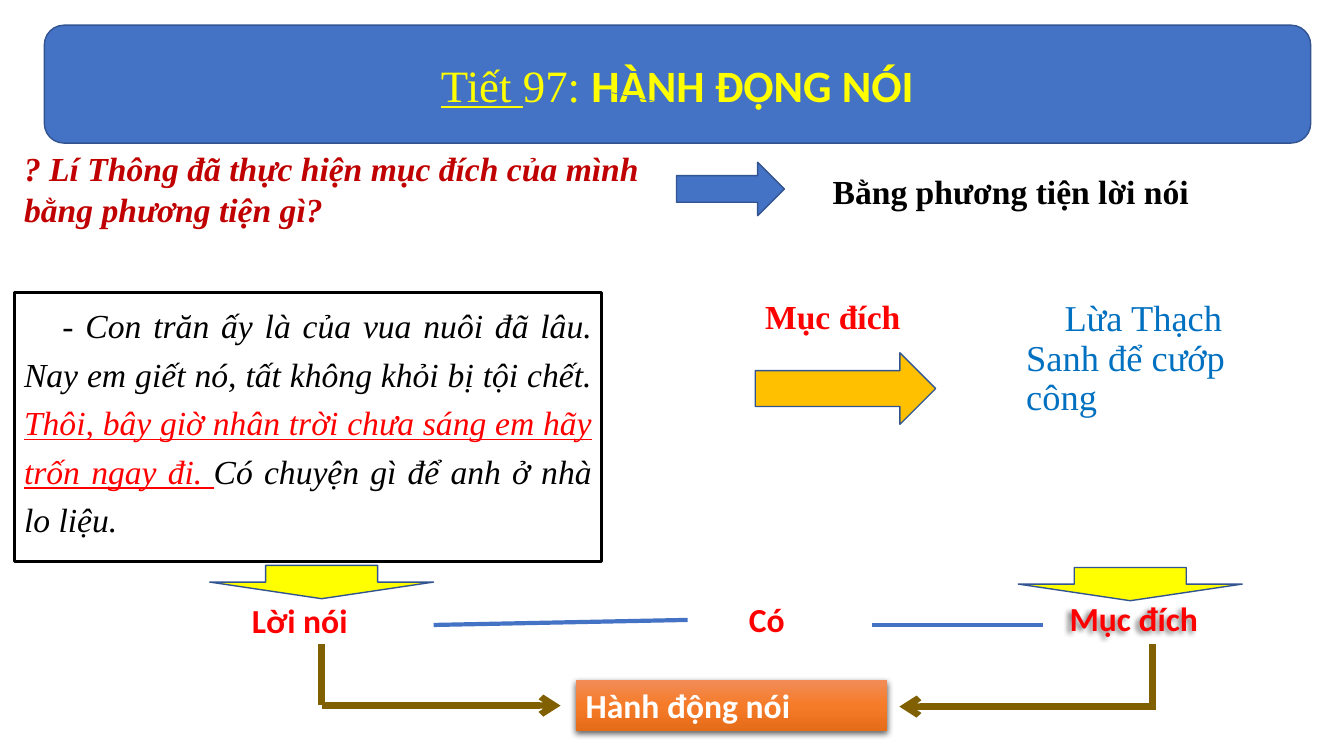
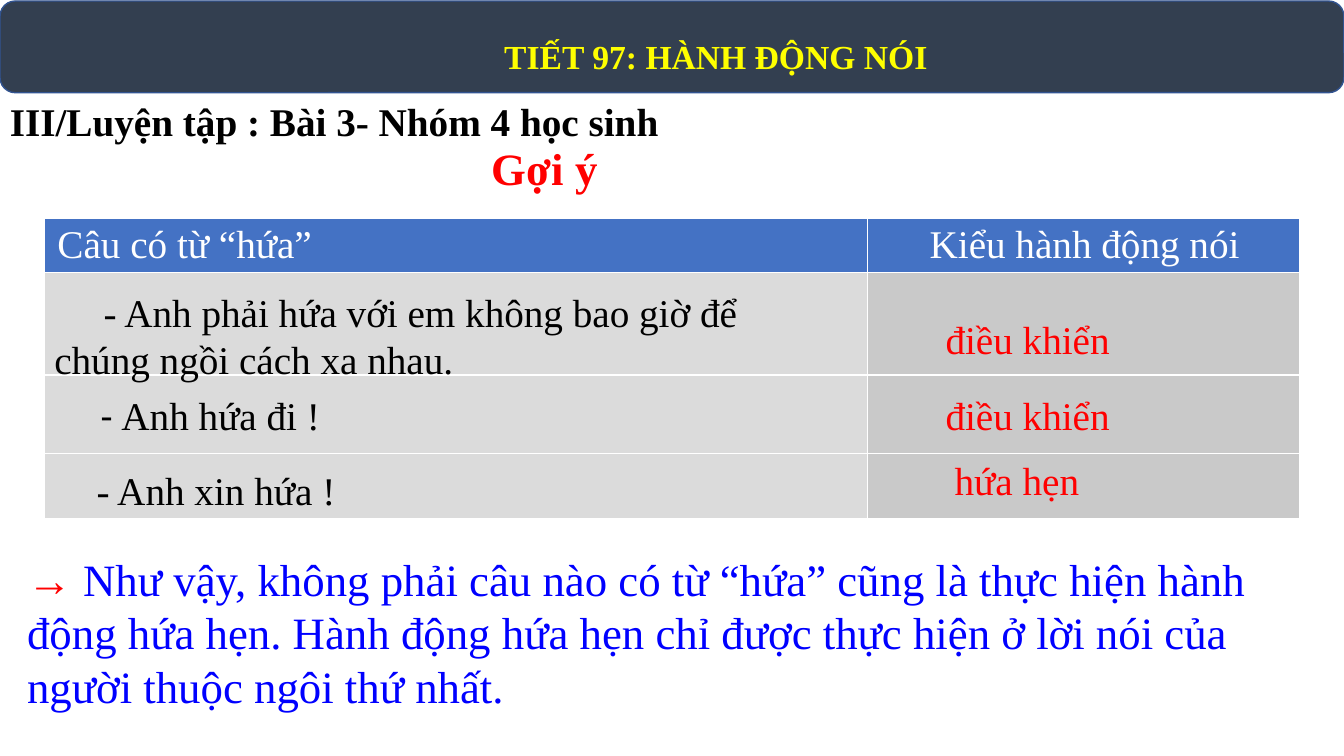
from lxml import etree
from pptx import Presentation
from pptx.dml.color import RGBColor
from pptx.enum import shapes, text
from pptx.oxml import parse_xml
from pptx.util import Inches, Pt

RED = RGBColor(255, 0, 0)
DARK_RED = RGBColor(0xC0, 0, 0)
YELLOW = RGBColor(255, 255, 0)
GOLD = RGBColor(0xFF, 0xC0, 0)
OLIVE = RGBColor(0x80, 0x60, 0)
BLUE = RGBColor(0x44, 0x72, 0xC4)
EDGE = RGBColor(0x32, 0x54, 0x91)
SKY = RGBColor(0, 0x70, 0xC0)
INK = RGBColor(0, 0, 255)
SLATE = RGBColor(0x33, 0x3F, 0x50)
BLACK = RGBColor(0, 0, 0)
WHITE = RGBColor(255, 255, 255)
GREYS = [RGBColor(0xDB, 0xDB, 0xDB), RGBColor(0xC9, 0xC9, 0xC9)]
ORANGES = [(0, "F18C57"), (50, "F67B28"), (100, "E56C19")]

SERIF, SANS = "Times New Roman", "Calibri"
NS = "http://schemas.openxmlformats.org/drawingml/2006/main"
KIND = shapes.MSO_SHAPE
ALIGN = text.PP_ALIGN
MIDDLE = text.MSO_ANCHOR.MIDDLE

# A run is (text, colour, style letters, font); style letters are b, i, u.
# A text is (left, top, width, height), size, runs, options.
TITLE = [("Tiết ", YELLOW, "u", SERIF), ("97: ", YELLOW, "", SERIF),
         ("HÀNH ĐỘNG NÓI", YELLOW, "b", SANS)]
QUOTE = [
    ("- ", BLACK, "", SERIF),
    ("Con trăn ấy là của vua nuôi đã lâu. Nay em giết nó, "
     "tất không khỏi bị tội chết. ", BLACK, "i", SERIF),
    ("Thôi, bây giờ nhân trời chưa sáng em hãy trốn ngay đi. ",
     RED, "iu", SERIF),
    ("Có chuyện gì để anh ở nhà lo liệu.", BLACK, "i", SERIF),
]
GOAL = [("Mục đích", RED, "b", SANS)]
SPEECH = [
    ((10.08, 2.93, 2.27, 2.55), 26,
     [("Lừa Thạch Sanh để cướp công", SKY, "", SERIF)],
     {"indent": 0.38, "gap": 0.9}),
    ((2.4, 5.9, 1.58, 0.5), 24, [("Lời nói", RED, "b", SANS)], {}),
    ((7.33, 5.89, 1.04, 0.5), 24, [("Có", RED, "b", SANS)], {}),
    ((7.49, 2.89, 2.06, 0.5), 24, [("Mục đích", RED, "b", SERIF)], {}),
    ((0.14, 1.42, 6.3, 0.91), 24,
     [("? Lí Thông đã thực hiện mục đích của mình bằng phương tiện gì?",
       DARK_RED, "bi", SERIF)], {}),
    ((8.16, 1.65, 4.18, 0.5), 24,
     [("Bằng phương tiện lời nói", BLACK, "b", SERIF)], {}),
]
ARROWS = [
    (KIND.RIGHT_ARROW, (7.49, 3.5, 1.79, 0.71), GOLD),
    (KIND.RIGHT_ARROW, (6.71, 1.61, 1.07, 0.53), BLUE),
    (KIND.DOWN_ARROW, (2.08, 5.61, 2.22, 0.33), YELLOW),
    (KIND.DOWN_ARROW, (10.1, 5.63, 2.22, 0.33), YELLOW),
]
LINES = [  # from x, from y, to x, to y, colour, width, arrowhead
    (4.3, 6.2, 6.82, 6.15, BLUE, 3, False),
    (8.65, 6.2, 10.34, 6.2, BLUE, 3, False),
    (3.19, 6.39, 3.19, 6.99, OLIVE, 4.5, False),
    (3.19, 7, 5.56, 7, OLIVE, 4.5, True),
    (11.43, 6.39, 11.43, 7.04, OLIVE, 4.5, False),
    (11.43, 7.01, 8.92, 7.01, OLIVE, 4.5, True),
    (6.07, 0.92, 7.69, 1.25, BLUE, 0.5, True),
]

HEADS = [("Câu có từ “hứa”", 0), ("Kiểu hành động nói", 0.49)]
COLS, ROWS = [8.16, 4.29], [0.52, 1.02, 0.78, 0.64]
DRILL = [
    ((1.1, 0.08, 12, 1.01), 24,
     [("TIẾT 97: HÀNH ĐỘNG NÓI", YELLOW, "b", SERIF)],
     {"align": ALIGN.CENTER, "gap": 0.9, "anchor": MIDDLE}),
    ((0, 0.92, 12, 0.57), 28,
     [("III/Luyện tập : Bài 3- Nhóm 4 học sinh", BLACK, "b", SERIF)], {}),
    ((4.78, 1.35, 1.37, 0.64), 32, [("Gợi ý", RED, "b", SERIF)], {}),
    ((0.44, 2.81, 7.66, 1.04), 28,
     [("- Anh phải hứa với em không bao giờ để chúng ngồi cách xa nhau.",
       BLACK, "", SERIF)], {"indent": 0.49}),
    ((0.9, 3.83, 3.54, 0.57), 28,
     [("- ", BLACK, "", SANS), ("Anh hứa đi !", BLACK, "", SERIF)], {}),
    ((0.86, 4.58, 2.59, 0.57), 28,
     [("- Anh xin hứa !", BLACK, "", SERIF)], {}),
    ((9.28, 3.08, 3.23, 0.57), 28, [("điều khiển", RED, "", SERIF)], {}),
    ((9.28, 3.83, 1.94, 0.57), 28, [("điều khiển", RED, "", SERIF)], {}),
    ((9.37, 4.48, 2.32, 0.57), 28, [("hứa hẹn", RED, "", SERIF)], {}),
    ((0.17, 5.42, 13.16, 1.72), 32,
     [("→", RED, "b", SERIF),
      (" Như vậy, không phải câu nào có từ “hứa” cũng là thực hiện hành "
       "động hứa hẹn. Hành động hứa hẹn chỉ được thực hiện ở lời nói của "
       "người thuộc ngôi thứ nhất.", INK, "", SERIF)], {}),
]


def place(at):
    return [Inches(n) for n in at]


def write(frame, size, runs, align=ALIGN.LEFT, indent=0, gap=None,
          anchor=text.MSO_ANCHOR.TOP):
    frame.word_wrap = True
    frame.vertical_anchor = anchor
    para = frame.paragraphs[0]
    para.alignment = align
    if indent:
        para._p.get_or_add_pPr().set("indent", str(Inches(indent)))
    if gap:
        para.line_spacing = gap
    for words, colour, style, face in runs:
        run = para.add_run()
        run.text = words
        font = run.font
        font.name, font.size = face, Pt(size)
        font.color.rgb = colour
        font.bold = "b" in style
        font.italic = "i" in style
        font.underline = "u" in style


def label(slide, at, size, runs, opts):
    box = slide.shapes.add_textbox(*place(at))
    write(box.text_frame, size, runs, **opts)
    return box


def block(slide, kind, at, fill=None, edge=EDGE, width=1):
    shape = slide.shapes.add_shape(kind, *place(at))
    shape.shadow.inherit = False
    if fill is None:
        shape.fill.background()
    else:
        shape.fill.solid()
        shape.fill.fore_color.rgb = fill
    if edge is None:
        shape.line.fill.background()
    else:
        shape.line.color.rgb = edge
        shape.line.width = Pt(width)
    return shape


def band(slide, at, fill):
    return block(slide, KIND.ROUNDED_RECTANGLE, at, fill)


def line(slide, x1, y1, x2, y2, colour, width, head):
    rule = slide.shapes.add_connector(
        shapes.MSO_CONNECTOR.STRAIGHT, *place((x1, y1, x2, y2)))
    rule.line.color.rgb = colour
    rule.line.width = Pt(width)
    if head:
        etree.SubElement(rule.line._get_or_add_ln(), f"{{{NS}}}tailEnd",
                         type="arrow")
    etree.SubElement(rule._element.spPr, f"{{{NS}}}effectLst")


def shade(shape, blur, dist, angle, alpha):
    shape.shadow.inherit = False
    effects = shape._element.spPr.find(f"{{{NS}}}effectLst")
    effects.append(parse_xml(
        f'<a:outerShdw xmlns:a="{NS}" blurRad="{Pt(blur)}" '
        f'dist="{Pt(dist)}" dir="{angle * 60000}" rotWithShape="0">'
        f'<a:srgbClr val="000000"><a:alpha val="{alpha * 1000}"/>'
        '</a:srgbClr></a:outerShdw>'))


def blend(shape, stops):
    marks = "".join(f'<a:gs pos="{pos * 1000}"><a:srgbClr val="{code}"/></a:gs>'
                    for pos, code in stops)
    old = shape._element.spPr.find(f"{{{NS}}}noFill")
    old.getparent().replace(old, parse_xml(
        f'<a:gradFill xmlns:a="{NS}"><a:gsLst>{marks}</a:gsLst>'
        '<a:lin ang="5400000" scaled="0"/></a:gradFill>'))


def speech(slide):
    bar = band(slide, (0.44, 0.25, 12.56, 1.17), BLUE)
    write(bar.text_frame, 32, TITLE, align=ALIGN.CENTER, anchor=MIDDLE)
    quote = block(slide, KIND.RECTANGLE, (0.14, 2.9, 5.83, 2.67),
                  edge=BLACK, width=2.25)
    write(quote.text_frame, 24, QUOTE, align=ALIGN.JUSTIFY,
          indent=0.38, gap=1.2)
    for kind, at, fill in ARROWS:
        block(slide, kind, at, fill)
    for item in SPEECH:
        label(slide, *item)
    goal = label(slide, (10.51, 5.88, 1.6, 0.5), 24, GOAL, {})
    shade(goal, 4, 3, 150, 50)
    for item in LINES:
        line(slide, *item)
    # Result box
    act = block(slide, KIND.RECTANGLE, (5.71, 6.75, 3.09, 0.5), edge=None)
    blend(act, ORANGES)
    shade(act, 4.5, 1.5, 90, 63)
    write(act.text_frame, 24, [("Hành động nói", WHITE, "b", SANS)])


def drill(slide):
    # Answer grid
    grid = slide.shapes.add_table(
        len(ROWS), len(COLS),
        *place((0.44, 2.17, sum(COLS), sum(ROWS)))).table
    for row, high in zip(grid.rows, ROWS):
        row.height = Inches(high)
    for c, wide in enumerate(COLS):
        grid.columns[c].width = Inches(wide)
        for r in range(len(ROWS)):
            cell = grid.cell(r, c)
            cell.fill.solid()
            cell.fill.fore_color.rgb = GREYS[c] if r else BLUE
        head, (words, indent) = grid.cell(0, c), HEADS[c]
        head.margin_left = head.margin_right = Inches(0.13)
        write(head.text_frame, 28, [(words, WHITE, "", SERIF)],
              indent=indent)
    # Title band and texts
    band(slide, (0, 0.01, 13.33, 0.91), SLATE)
    for item in DRILL:
        label(slide, *item)


def main():
    deck = Presentation()
    deck.slide_width, deck.slide_height = Inches(13.33), Inches(7.5)
    for draw in (speech, drill):
        draw(deck.slides.add_slide(deck.slide_layouts[6]))
    deck.save("out.pptx")


if __name__ == "__main__":
    main()
